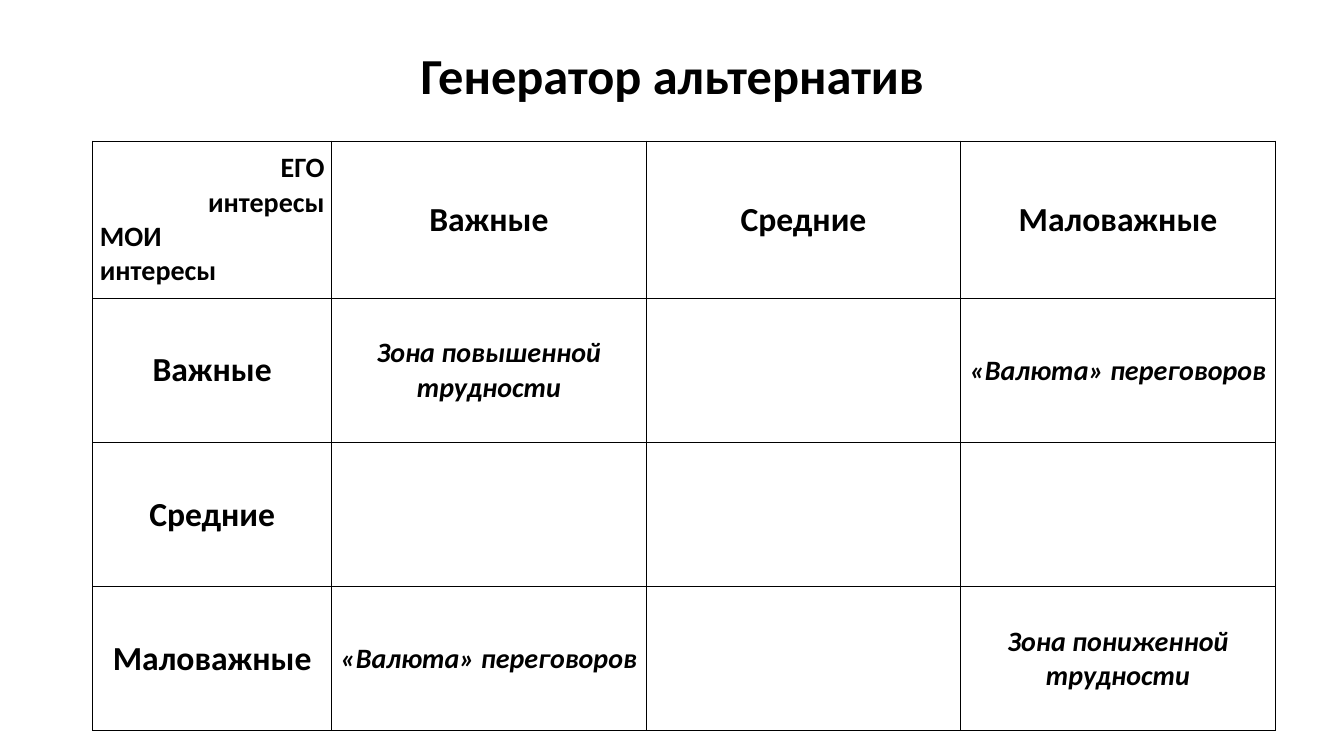
from lxml import etree
from pptx import Presentation
from pptx.dml.color import RGBColor
from pptx.enum.text import MSO_ANCHOR, PP_ALIGN
from pptx.oxml.ns import qn
from pptx.util import Inches, Pt

LEFT, MID, RIGHT = PP_ALIGN.LEFT, PP_ALIGN.CENTER, PP_ALIGN.RIGHT
CENTER = MSO_ANCHOR.MIDDLE
COLORS = {"ink": "000000", "paper": "FFFFFF"}
HEAD, NOTE = 24, 20


def write(para, text, size, align=MID, italic=False):
    para.alignment = align
    run = para.add_run()
    run.text = text
    font = run.font
    font.name, font.size = "Calibri", Pt(size)
    font.bold, font.italic = True, italic
    font.color.rgb = RGBColor.from_string(COLORS["ink"])


def outline(cell):
    """Draw a thin line on all four sides of a cell."""
    props = cell._tc.get_or_add_tcPr()
    for spot, side in enumerate(("lnL", "lnR", "lnT", "lnB")):
        line = etree.Element(qn("a:" + side), w=str(Pt(1)))
        fill = etree.SubElement(line, qn("a:solidFill"))
        etree.SubElement(fill, qn("a:srgbClr"), val=COLORS["ink"])
        props.insert(spot, line)


deck = Presentation()
deck.slide_width, deck.slide_height = Inches(13.33), Inches(7.5)
slide = deck.slides.add_slide(deck.slide_layouts[5])
slide.background.fill.solid()
slide.background.fill.fore_color.rgb = RGBColor.from_string(COLORS["paper"])

title = slide.shapes.title
title.left, title.top = Inches(0.92), Inches(0.28)
title.width, title.height = Inches(11.5), Inches(1)
title.text_frame.vertical_anchor = CENTER
para = title.text_frame.paragraphs[0]
para.line_spacing = 0.9
write(para, "Генератор альтернатив", 36)

widths = [2.37] + [3.12] * 3
heights = [1.56] + [1.43] * 3
levels = ["Важные", "Средние", "Маловажные"]
corner = [("ЕГО", RIGHT), ("интересы", RIGHT), ("МОИ", LEFT), ("интересы", LEFT)]
zones = {
    (1, 1): "Зона повышенной трудности",
    (1, 3): "«Валюта» переговоров",
    (3, 1): "«Валюта» переговоров",
    (3, 3): "Зона пониженной трудности",
}

table = slide.shapes.add_table(
    len(heights), len(widths), Inches(0.92), Inches(1.4),
    Inches(sum(widths)), Inches(sum(heights))).table
table.first_row = table.horz_banding = False
for col, width in zip(table.columns, widths):
    col.width = Inches(width)
for row, height in zip(table.rows, heights):
    row.height = Inches(height)

for r in range(len(heights)):
    for c in range(len(widths)):
        cell = table.cell(r, c)
        cell.fill.background()
        outline(cell)
        cell.vertical_anchor = CENTER
        cell.margin_left = cell.margin_right = Inches(0.07)
        cell.margin_top = cell.margin_bottom = Inches(0.1)
        frame = cell.text_frame
        para = frame.paragraphs[0]
        if r == c == 0:
            for i, (text, align) in enumerate(corner):
                write(frame.add_paragraph() if i else para, text, NOTE, align)
        elif r == 0 or c == 0:
            write(para, levels[r + c - 1], HEAD)
        elif (r, c) in zones:
            write(para, zones[r, c], NOTE, italic=True)

deck.save("out.pptx")
